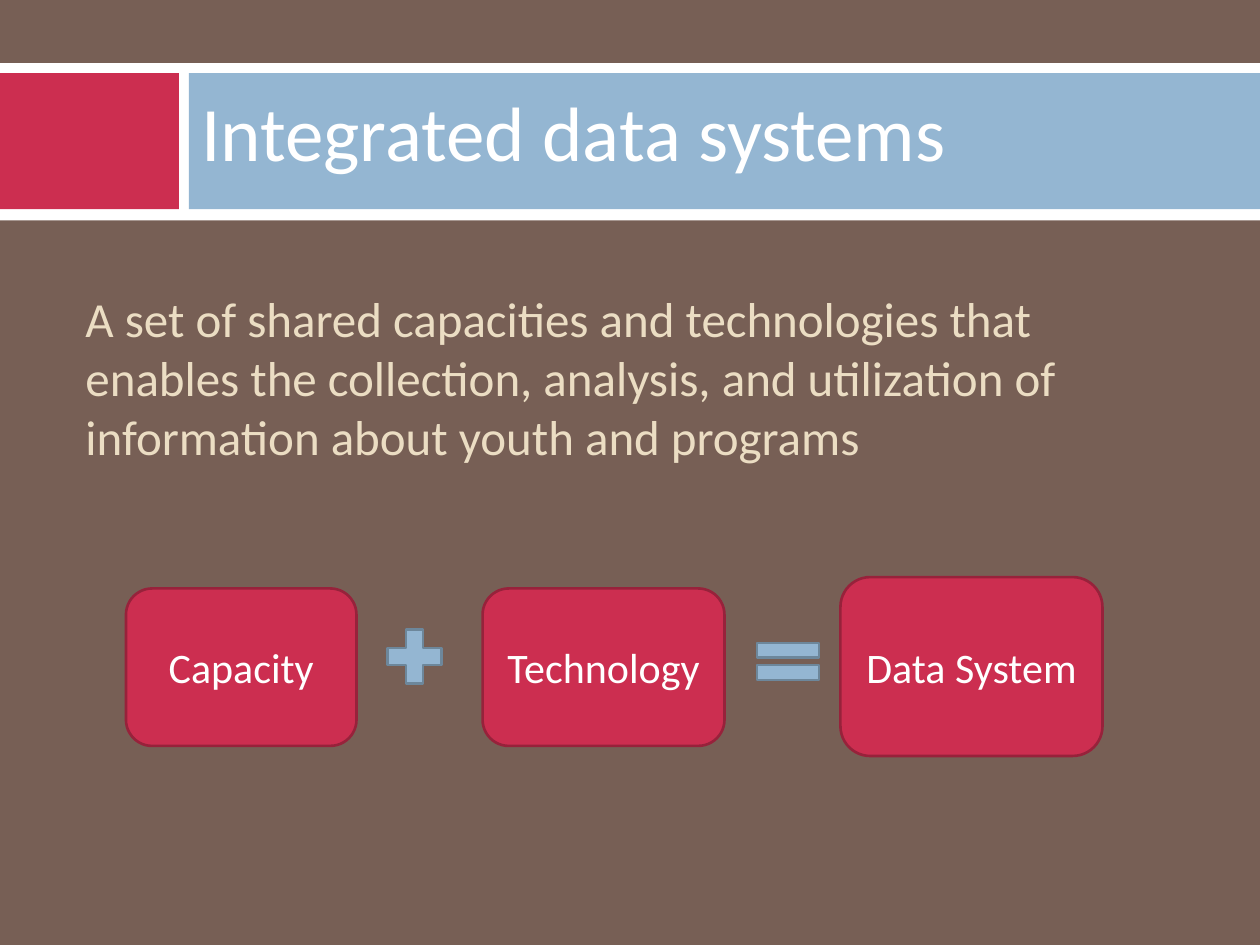
"""Build the integrated data systems slide."""
from pptx import Presentation
from pptx import util as u
from pptx.dml.color import RGBColor
from pptx.enum import shapes, text

WHITE, RED, BLUE = "FFFFFF", "CC2E50", "94B6D2"
DARK_RED, DARK_BLUE, BROWN, CREAM = "97223B", "6D879B", "775F55", "EBDDC3"
KIND = shapes.MSO_SHAPE


def add_block(kind, box, fill, line=None):
    shape = slide.shapes.add_shape(kind, *map(u.Inches, box))
    shape.shadow.inherit = False
    shape.fill.solid()
    shape.fill.fore_color.rgb = RGBColor.from_string(fill)
    if line:
        shape.line.color.rgb = RGBColor.from_string(line)
        shape.line.width = u.Pt(1.5)
    else:
        shape.line.fill.background()
    return shape


def write(shape, words, size, color, align, anchor):
    frame = shape.text_frame
    frame.word_wrap = True
    frame.vertical_anchor = anchor
    paragraph = frame.paragraphs[0]
    paragraph.alignment = align
    run = paragraph.add_run()
    run.text = words
    run.font.name = "Calibri"
    run.font.size = u.Pt(size)
    run.font.color.rgb = RGBColor.from_string(color)


presentation = Presentation()
presentation.slide_width = u.Inches(10)
presentation.slide_height = u.Inches(7.5)
slide = presentation.slides.add_slide(presentation.slide_layouts[6])
slide.background.fill.solid()
slide.background.fill.fore_color.rgb = RGBColor.from_string(BROWN)

for box, fill in [
    ((0, 0.5, 10, 1.25), WHITE),
    ((0, 0.58, 1.42, 1.08), RED),
    ((1.5, 0.58, 8.5, 1.08), BLUE),
]:
    add_block(KIND.RECTANGLE, box, fill)

definition = (
    "A set of shared capacities and technologies that enables the collection, "
    "analysis, and utilization of information about youth and programs"
)
for words, box, size, color, anchor in [
    ("Integrated data systems", (1.5, 0.5, 8.5, 1.08), 44, WHITE, text.MSO_ANCHOR.MIDDLE),
    (definition, (0.58, 2.24, 8.92, 1.6), 28, CREAM, text.MSO_ANCHOR.TOP),
]:
    textbox = slide.shapes.add_textbox(*map(u.Inches, box))
    write(textbox, words, size, color, text.PP_ALIGN.LEFT, anchor)

for words, box in [
    ("Capacity", (1, 4.67, 1.83, 1.25)),
    ("Technology", (3.83, 4.67, 1.92, 1.25)),
    ("Data System", (6.67, 4.58, 2.08, 1.42)),
]:
    shape = add_block(KIND.ROUNDED_RECTANGLE, box, RED, DARK_RED)
    write(shape, words, 24, WHITE, text.PP_ALIGN.CENTER, text.MSO_ANCHOR.MIDDLE)

for kind, box in [
    (KIND.MATH_PLUS, (3, 4.92, 0.58, 0.58)),
    (KIND.MATH_EQUAL, (5.92, 5, 0.67, 0.5)),
]:
    add_block(kind, box, BLUE, DARK_BLUE)

presentation.save("out.pptx")
